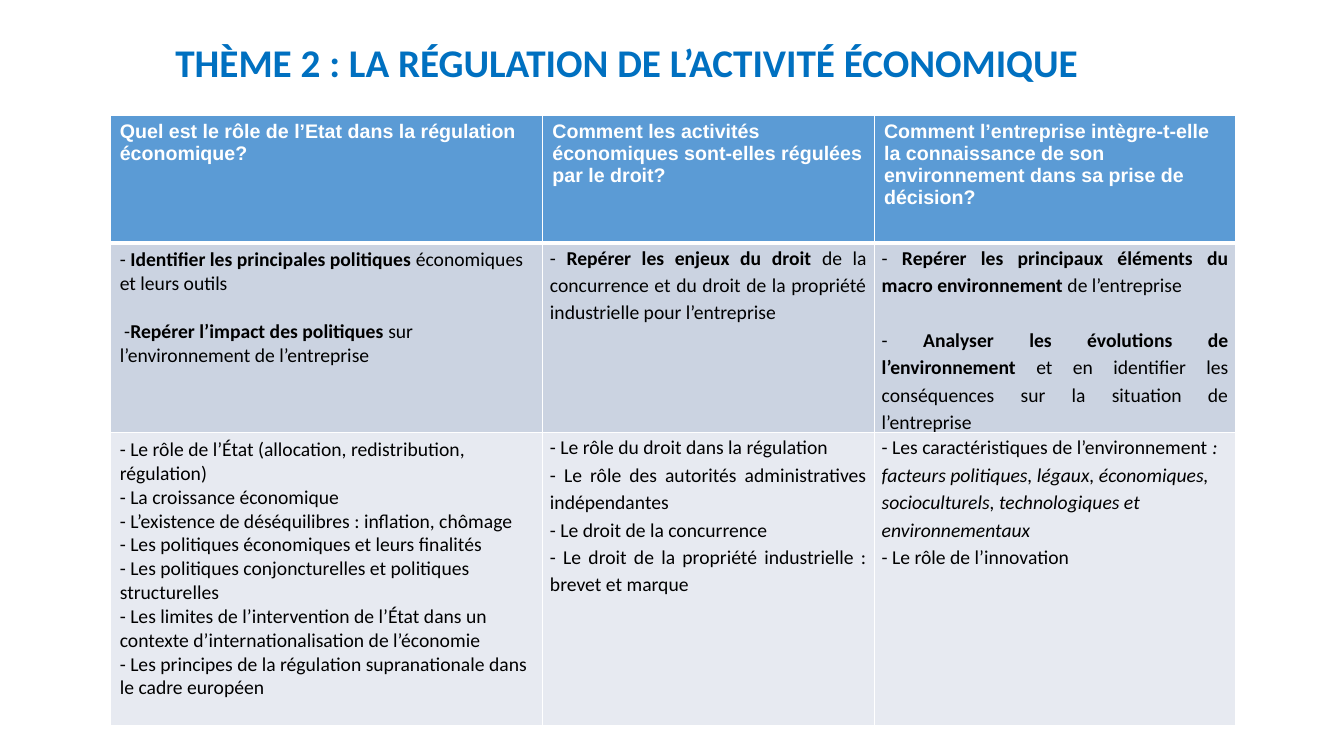
"""Build the slide on theme 2: the regulation of economic activity."""
import pptx
import pptx.dml.color
import pptx.enum.text
import pptx.oxml
import pptx.oxml.ns
import pptx.util

Cm = pptx.util.Cm
Pt = pptx.util.Pt
ALIGN = pptx.enum.text.PP_ALIGN
ANCHOR = pptx.enum.text.MSO_ANCHOR
RGBColor = pptx.dml.color.RGBColor

TITLE_BLUE = RGBColor(0x00, 0x70, 0xC0)
HEADER_BLUE = RGBColor(0x5B, 0x9B, 0xD5)
BAND_DARK = RGBColor(0xCB, 0xD3, 0xE1)
BAND_LIGHT = RGBColor(0xE7, 0xEA, 0xF1)
WHITE = RGBColor(0xFF, 0xFF, 0xFF)
BLACK = RGBColor(0x00, 0x00, 0x00)


def add_run(p, text, font="Calibri", size=14, color=BLACK, bold=False, italic=False):
    r = p.add_run()
    r.text = text
    r.font.name = font
    r.font.size = Pt(size)
    r.font.color.rgb = color
    r.font.bold = bold
    r.font.italic = italic


def set_borders(cell, top, bottom):
    tc_pr = cell._tc.get_or_add_tcPr()
    widths = {"lnL": 1, "lnR": 1, "lnT": top, "lnB": bottom}
    for i, (side, width) in enumerate(widths.items()):
        line = pptx.oxml.parse_xml(
            f'<a:{side} {pptx.oxml.ns.nsdecls("a")} w="{Pt(width)}">'
            f'<a:solidFill><a:srgbClr val="{WHITE}"/></a:solidFill></a:{side}>')
        tc_pr.insert(i, line)


headers = [
    "Quel est le rôle de l’Etat dans la régulation économique?",
    "Comment les activités économiques sont-elles régulées par le droit?",
    "Comment l’entreprise intègre-t-elle la connaissance de son environnement "
    "dans sa prise de décision?",
]
skills = [
    [
        [("- ", {}), ("Identifier les principales politiques ", {"bold": True}),
         ("économiques et leurs outils", {})],
        [(" -", {}), ("Repérer l’impact des politiques ", {"bold": True}),
         ("sur l’environnement de l’entreprise", {})],
    ],
    [
        [("- ", {}), ("Repérer les enjeux du droit ", {"bold": True}),
         ("de la concurrence et du droit de la propriété industrielle "
          "pour l’entreprise", {})],
    ],
    [
        [("- ", {}),
         ("Repérer les principaux éléments du macro environnement ", {"bold": True}),
         ("de l’entreprise", {})],
        [("- ", {}), ("Analyser les évolutions de l’environnement ", {"bold": True}),
         ("et en identifier les conséquences sur la situation de l’entreprise", {})],
    ],
]
notions = [
    [[(text, {})] for text in (
        "- Le rôle de l’État (allocation, redistribution, régulation)",
        "- La croissance économique",
        "- L’existence de déséquilibres : inflation, chômage",
        "- Les politiques économiques et leurs finalités",
        "- Les politiques conjoncturelles et politiques structurelles",
        "- Les limites de l’intervention de l’État dans un contexte "
        "d’internationalisation de l’économie",
        "- Les principes de la régulation supranationale dans le cadre européen",
    )],
    [[(text, {})] for text in (
        "- Le rôle du droit dans la régulation",
        "- Le rôle des autorités administratives indépendantes",
        "- Le droit de la concurrence",
        "- Le droit de la propriété industrielle : brevet et marque",
    )],
    [
        [("- Les caractéristiques de l’environnement ", {}),
         (": facteurs politiques, légaux, économiques, socioculturels, "
          "technologiques et environnementaux", {"italic": True})],
        [("- Le rôle de l’innovation", {})],
    ],
]
header_format = {"font": "Arial", "color": WHITE, "bold": True}
rows = [[[[(text, header_format)]] for text in headers], skills, notions]
fills = [HEADER_BLUE, BAND_DARK, BAND_LIGHT]
border_widths = [(1, 3), (3, 1), (1, 1)]
col_widths = [10.9, 8.36, 9.12]
row_heights = [3.2, 4.78, 7.37]

prs = pptx.Presentation()
prs.slide_width = Cm(33.87)
prs.slide_height = Cm(19.05)
slide = prs.slides.add_slide(prs.slide_layouts[6])

sp = slide.shapes.add_textbox(Cm(2.77), Cm(0.36), Cm(26.04), Cm(2.57))
tf = sp.text_frame
tf.word_wrap = True
tf.vertical_anchor = ANCHOR.MIDDLE
p = tf.paragraphs[0]
p.alignment = ALIGN.CENTER
p.line_spacing = 0.9
add_run(p, "THÈME 2 : LA RÉGULATION DE L’ACTIVITÉ ÉCONOMIQUE",
        size=28, color=TITLE_BLUE, bold=True)

table = slide.shapes.add_table(3, 3, Cm(2.77), Cm(2.92),
                               Cm(sum(col_widths)), Cm(sum(row_heights))).table
for col, width in zip(table.columns, col_widths):
    col.width = Cm(width)
for row, height in zip(table.rows, row_heights):
    row.height = Cm(height)

for i, row in enumerate(rows):
    for j, paragraphs in enumerate(row):
        cell = table.cell(i, j)
        cell.fill.solid()
        cell.fill.fore_color.rgb = fills[i]
        set_borders(cell, *border_widths[i])
        justified = i > 0 and j > 0
        cell.margin_left = cell.margin_right = Cm(0.19 if justified else 0.25)
        cell.margin_top = cell.margin_bottom = Cm(0 if justified else 0.13)
        tf = cell.text_frame
        for k, runs in enumerate(paragraphs):
            p = tf.paragraphs[0] if k == 0 else tf.add_paragraph()
            has_italic = any("italic" in fmt for _, fmt in runs)
            p.alignment = ALIGN.JUSTIFY if justified and not has_italic else ALIGN.LEFT
            if justified:
                p.line_spacing = 1.15
            if row is skills and k > 0:
                p.space_before = Pt(19.7 if justified else 17.1)
            for text, fmt in runs:
                add_run(p, text, **fmt)

prs.save("out.pptx")
